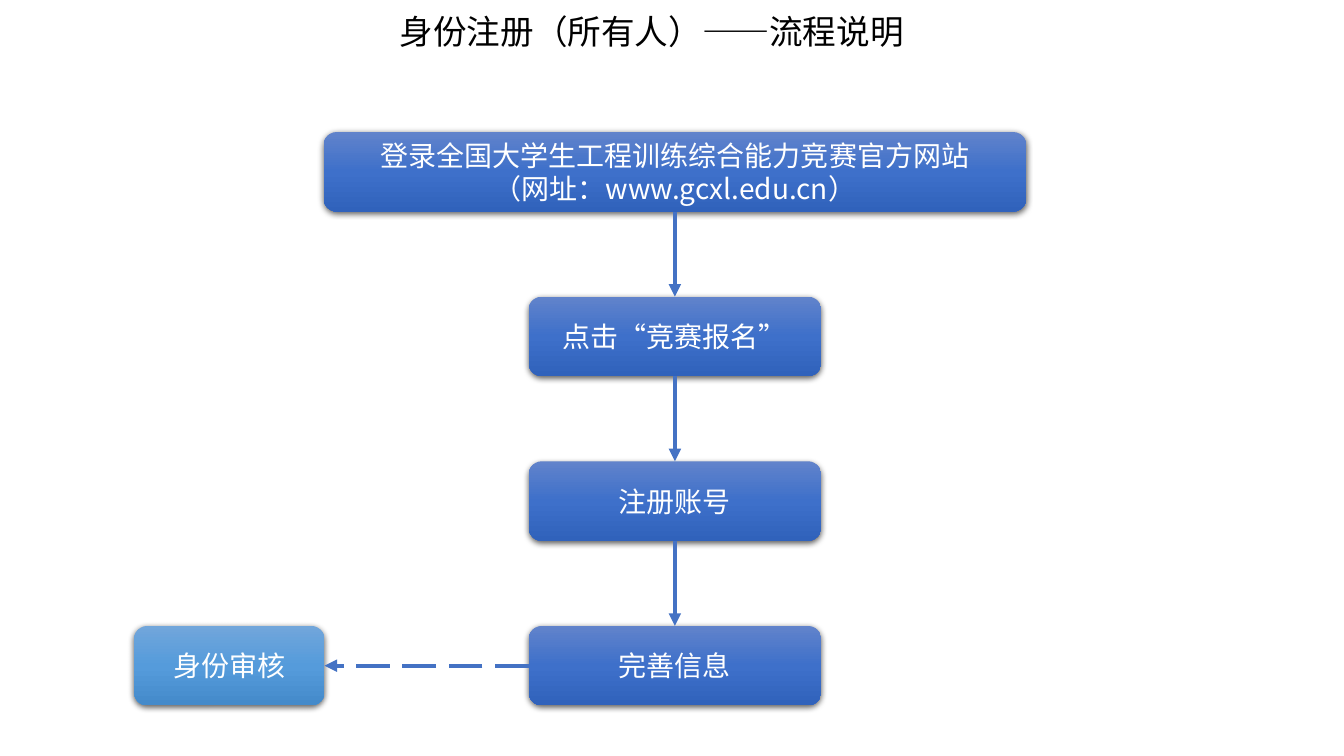
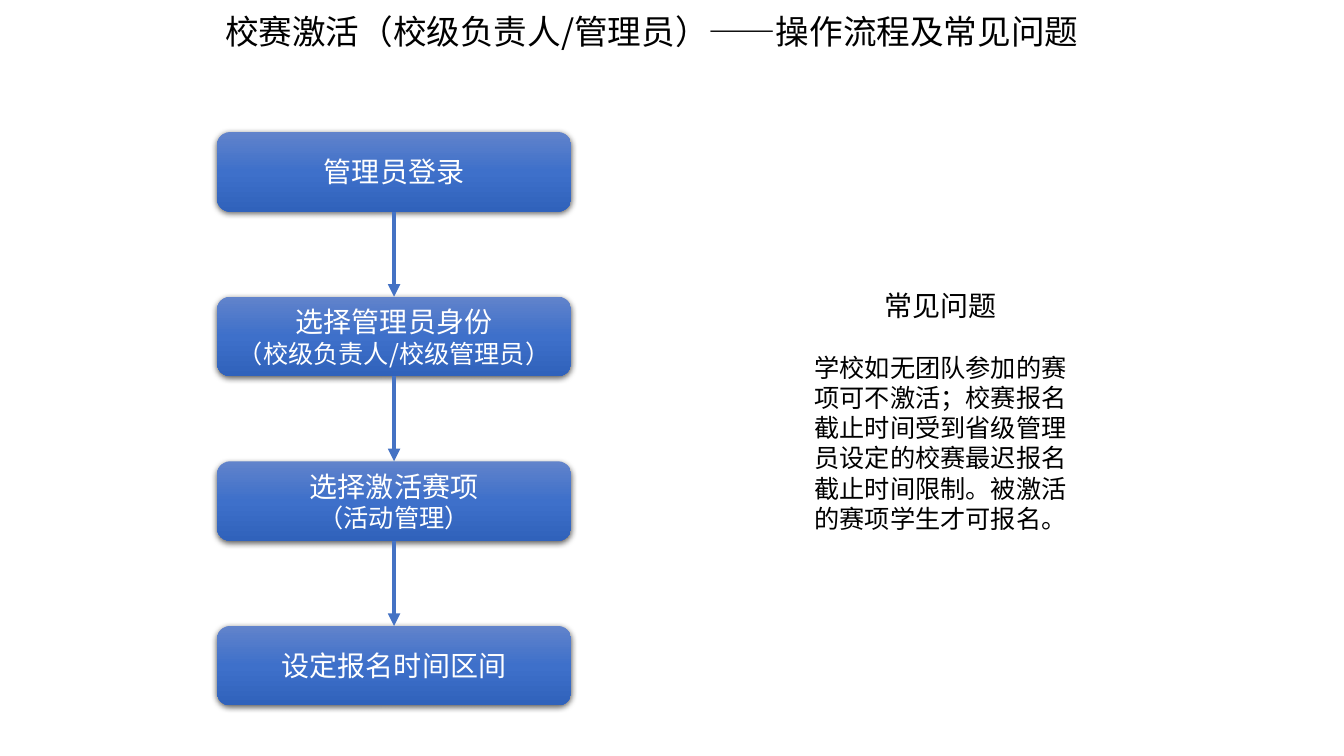
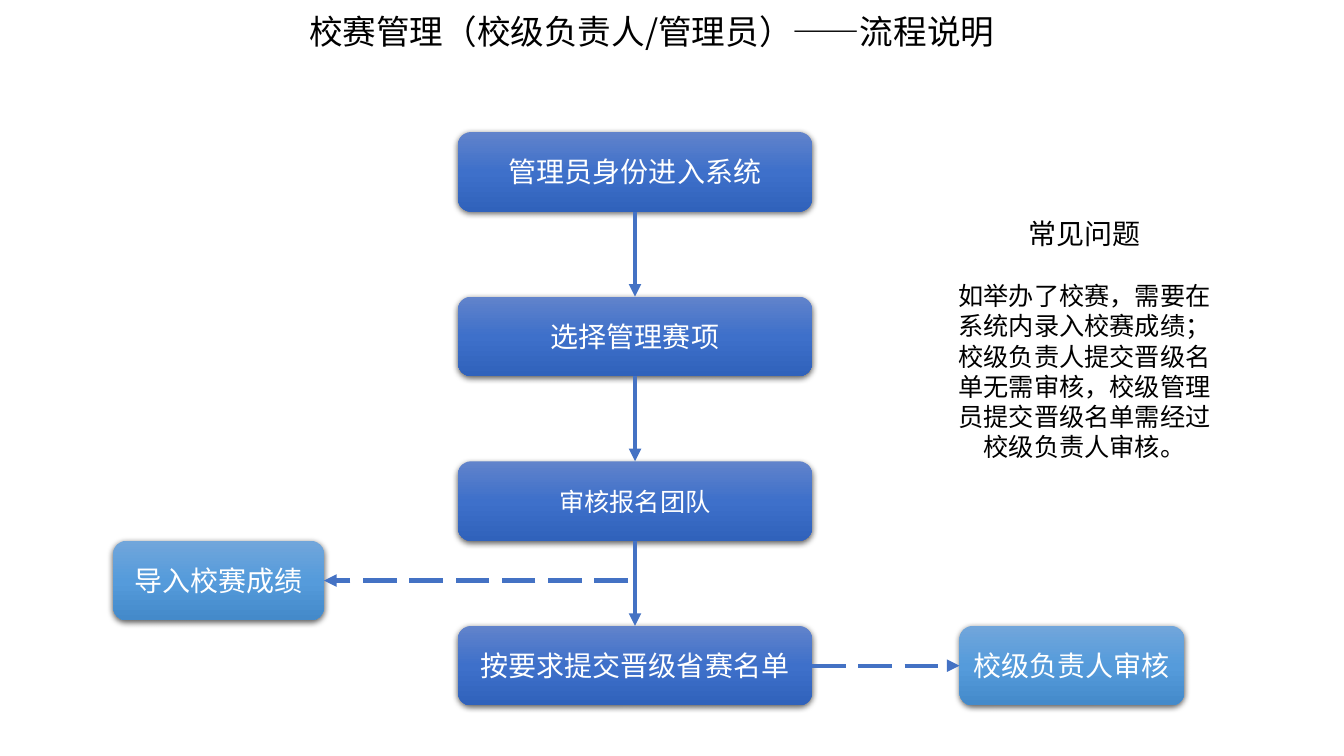
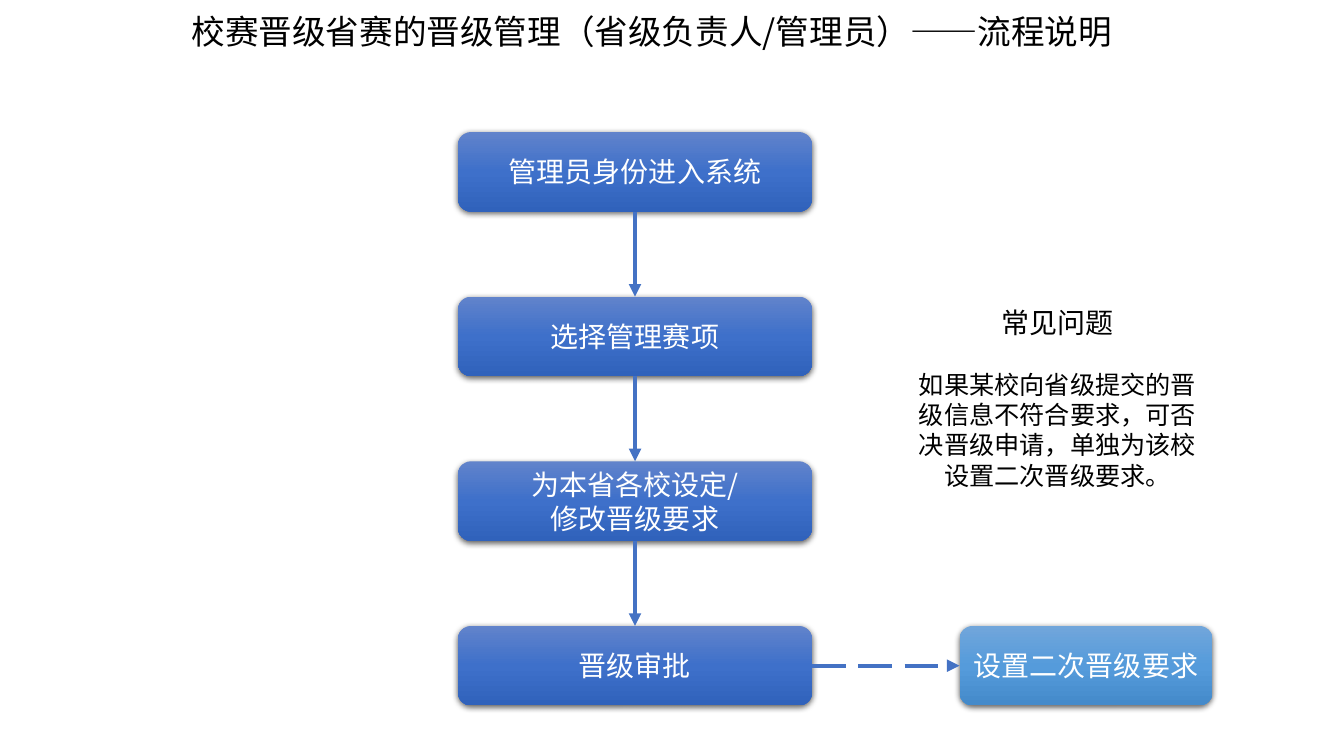
"""Build four flow-chart slides that explain contest registration and promotion."""
import copy

import pptx
import pptx.dml.color
import pptx.enum.dml
import pptx.enum.shapes
import pptx.enum.text
import pptx.oxml
import pptx.oxml.ns
import pptx.util

Pt = pptx.util.Pt
RGBColor = pptx.dml.color.RGBColor
qn = pptx.oxml.ns.qn

FONT = "Noto Sans CJK SC"
BLACK = RGBColor(0x00, 0x00, 0x00)
WHITE = RGBColor(0xFF, 0xFF, 0xFF)
ARROW_BLUE = RGBColor(0x44, 0x72, 0xC4)
STEP_GRADIENT = (RGBColor(0x61, 0x83, 0xCB), RGBColor(0x3E, 0x70, 0xCA), RGBColor(0x30, 0x62, 0xBB))
BRANCH_GRADIENT = (RGBColor(0x71, 0xA6, 0xDB), RGBColor(0x55, 0x9B, 0xDB), RGBColor(0x44, 0x8A, 0xCA))

TITLE_SIZE, LARGE, SMALL = 24, 20, 18
LINE_FACTOR = 1.2
STEP_TOP, STEP_PITCH, BOX_HEIGHT = 94.3, 117.6, 56.8
TOP, LEFT, BOTTOM, RIGHT = range(4)
NOTE_HEADING = "常见问题"

SLIDES = [
    {
        "title": "身份注册（所有人）——流程说明",
        "center": 482.1,
        "widths": [502, 209, 209, 209],
        "steps": [
            [("登录全国大学生工程训练综合能力竞赛官方网站", LARGE), ("（网址：www.gcxl.edu.cn）", LARGE)],
            [("点击“竞赛报名”", LARGE)],
            [("注册账号", LARGE)],
            [("完善信息", LARGE)],
        ],
        "branches": [{"text": "身份审核", "left": 95.8, "width": 136, "side": LEFT}],
    },
    {
        "title": "校赛激活（校级负责人/管理员）——操作流程及常见问题",
        "center": 281.5,
        "widths": [253] * 4,
        "steps": [
            [("管理员登录", LARGE)],
            [("选择管理员身份", LARGE), ("（校级负责人/校级管理员）", SMALL)],
            [("选择激活赛项", LARGE), ("（活动管理）", SMALL)],
            [("设定报名时间区间", LARGE)],
        ],
        "note": {
            "text": "学校如无团队参加的赛项可不激活；校赛报名截止时间受到省级管理员设定的校赛最迟报名截止时间限制。被激活的赛项学生才可报名。",
            "box": (568, 202.3, 207.4, 184.3),
        },
    },
    {
        "title": "校赛管理（校级负责人/管理员）——流程说明",
        "center": 453.6,
        "widths": [253] * 4,
        "steps": [
            [("管理员身份进入系统", LARGE)],
            [("选择管理赛项", LARGE)],
            [("审核报名团队", SMALL)],
            [("按要求提交晋级省赛名单", LARGE)],
        ],
        "branches": [
            {"text": "导入校赛成绩", "left": 80.9, "width": 150.5, "side": LEFT, "between_steps": True},
            {"text": "校级负责人审核", "left": 685.4, "width": 160.6, "side": RIGHT},
        ],
        "note": {
            "text": "如举办了校赛，需要在系统内录入校赛成绩；校级负责人提交晋级名单无需审核，校级管理员提交晋级名单需经过校级负责人审核。",
            "box": (671, 151.2, 207.4, 184.3),
        },
    },
    {
        "title": "校赛晋级省赛的晋级管理（省级负责人/管理员）——流程说明",
        "center": 453.6,
        "widths": [253] * 4,
        "steps": [
            [("管理员身份进入系统", LARGE)],
            [("选择管理赛项", LARGE)],
            [("为本省各校设定/", LARGE), ("修改晋级要求", LARGE)],
            [("晋级审批", LARGE)],
        ],
        "branches": [{"text": "设置二次晋级要求", "left": 685.4, "width": 180.7, "side": RIGHT}],
        "note": {
            "text": "如果某校向省级提交的晋级信息不符合要求，可否决晋级申请，单独为该校设置二次晋级要求。",
            "box": (644.4, 214.6, 221.8, 140.4),
        },
    },
]


def write_lines(text_frame, lines, color):
    """Write each (text, size) line as a centred paragraph."""
    text_frame.word_wrap = True
    for index, (text, size) in enumerate(lines):
        paragraph = text_frame.add_paragraph() if index else text_frame.paragraphs[0]
        paragraph.text = text
        paragraph.alignment = pptx.enum.text.PP_ALIGN.CENTER
        paragraph.line_spacing = Pt(size * LINE_FACTOR)
        paragraph.font.size = Pt(size)
        paragraph.font.name = FONT
        paragraph.font.color.rgb = color
        properties = paragraph._p.pPr.find(qn("a:defRPr"))
        properties.append(pptx.oxml.parse_xml(
            f'<a:ea {pptx.oxml.ns.nsdecls("a")} typeface="{FONT}"/>'))


def add_title(slide, text):
    """Place the title in its placeholder."""
    title = slide.shapes.title
    title.left, title.top, title.width, title.height = Pt(38.2), Pt(4.3), Pt(854.6), Pt(36)
    title.text_frame.auto_size = pptx.enum.text.MSO_AUTO_SIZE.NONE
    title.text_frame.vertical_anchor = pptx.enum.text.MSO_ANCHOR.TOP
    write_lines(title.text_frame, [(text, TITLE_SIZE)], BLACK)


def add_box(slide, left, top, width, lines, gradient):
    """Add a rounded box with a three-colour gradient and a soft shadow."""
    box = slide.shapes.add_shape(
        pptx.enum.shapes.MSO_SHAPE.ROUNDED_RECTANGLE, Pt(left), Pt(top), Pt(width), Pt(BOX_HEIGHT))
    box.line.fill.background()
    box.fill.gradient()
    box.fill.gradient_angle = 270
    stop_list = box._element.spPr.find(".//" + qn("a:gsLst"))
    stop_list.insert(1, copy.deepcopy(stop_list[0]))
    for stop, position, color in zip(box.fill.gradient_stops, (0, 0.5, 1), gradient):
        stop.position = position
        stop.color.rgb = color
    box.shadow.inherit = False
    box._element.spPr.find(qn("a:effectLst")).append(pptx.oxml.parse_xml(
        f'<a:outerShdw {pptx.oxml.ns.nsdecls("a")} blurRad="{Pt(4.5)}" dist="{Pt(1.5)}" '
        'dir="5400000" algn="ctr" rotWithShape="0">'
        '<a:srgbClr val="000000"><a:alpha val="63000"/></a:srgbClr></a:outerShdw>'))
    frame = box.text_frame
    frame.margin_left = frame.margin_right = 0
    frame.vertical_anchor = pptx.enum.text.MSO_ANCHOR.MIDDLE
    write_lines(frame, lines, WHITE)
    return box


def add_arrow(slide, target, target_side, source=None, source_side=BOTTOM, start=(0, 0), dashed=False):
    """Draw an arrow to a box from another box or from a free point."""
    x, y = Pt(start[0]), Pt(start[1])
    arrow = slide.shapes.add_connector(pptx.enum.shapes.MSO_CONNECTOR.STRAIGHT, x, y, x, y)
    if source is not None:
        arrow.begin_connect(source, source_side)
    arrow.end_connect(target, target_side)
    arrow.line.color.rgb = ARROW_BLUE
    arrow.line.width = Pt(3)
    if dashed:
        arrow.line.dash_style = pptx.enum.dml.MSO_LINE.LONG_DASH
    namespace = pptx.oxml.ns.nsdecls("a")
    arrow.line._get_or_add_ln().append(pptx.oxml.parse_xml(f'<a:tailEnd {namespace} type="triangle"/>'))
    arrow._element.spPr.append(pptx.oxml.parse_xml(f"<a:effectLst {namespace}/>"))


def add_steps(slide, center, widths, steps):
    """Stack the steps, join them with arrows and return the last one."""
    previous = None
    for index, (width, lines) in enumerate(zip(widths, steps)):
        top = STEP_TOP + index * STEP_PITCH
        box = add_box(slide, center - width / 2, top, width, lines, STEP_GRADIENT)
        if previous is not None:
            add_arrow(slide, box, TOP, previous)
        previous = box
    return previous


def add_branch(slide, branch, last_step, center):
    """Add a side box with a dashed arrow from the last step or the arrow above it."""
    last_top = STEP_TOP + 3 * STEP_PITCH
    between = branch.get("between_steps", False)
    top = last_top - STEP_PITCH + BOX_HEIGHT if between else last_top
    box = add_box(slide, branch["left"], top, branch["width"], [(branch["text"], LARGE)], BRANCH_GRADIENT)
    near_side = RIGHT if branch["side"] == LEFT else LEFT
    if between:
        add_arrow(slide, box, near_side, start=(center - 5, top + BOX_HEIGHT / 2), dashed=True)
    else:
        add_arrow(slide, box, near_side, last_step, branch["side"], dashed=True)


def add_note(slide, text, box):
    """Add the common-questions text."""
    frame = slide.shapes.add_textbox(*map(Pt, box)).text_frame
    write_lines(frame, [(NOTE_HEADING, LARGE), (text, SMALL)], BLACK)
    frame.paragraphs[1].space_before = Pt(SMALL * LINE_FACTOR)


def main():
    """Build and save the presentation."""
    presentation = pptx.Presentation()
    presentation.slide_width, presentation.slide_height = Pt(960), Pt(540)
    for content in SLIDES:
        slide = presentation.slides.add_slide(presentation.slide_layouts[5])
        add_title(slide, content["title"])
        last_step = add_steps(slide, content["center"], content["widths"], content["steps"])
        for branch in content.get("branches", []):
            add_branch(slide, branch, last_step, content["center"])
        if "note" in content:
            add_note(slide, **content["note"])
    presentation.save("out.pptx")


if __name__ == "__main__":
    main()
